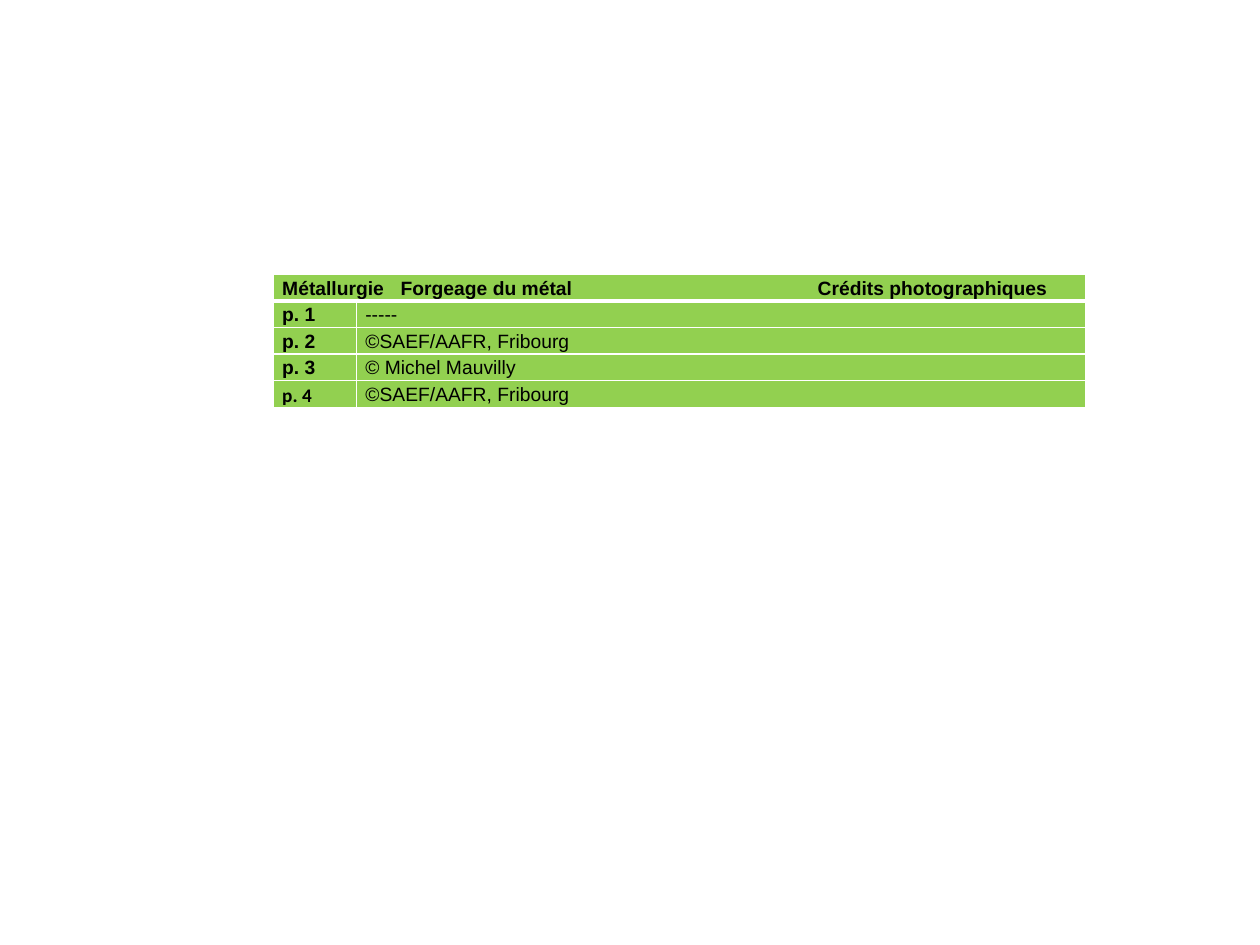
import lxml.etree
import pptx
import pptx.dml.color
import pptx.oxml.ns
import pptx.util
from pptx.util import Inches

GREEN = pptx.dml.color.RGBColor(0x92, 0xD0, 0x50)
BLACK = pptx.dml.color.RGBColor(0, 0, 0)
WHITE = pptx.dml.color.RGBColor(0xFF, 0xFF, 0xFF)

HEADING = "Métallurgie\tForgeage du métal\tCrédits photographiques"
HEADING_TABS = (Inches(0.94), Inches(4.25))
CREDITS = [
    ("p. 1", "-----"),
    ("p. 2", "©SAEF/AAFR, Fribourg"),
    ("p. 3", "© Michel Mauvilly"),
    ("p. 4", "©SAEF/AAFR, Fribourg"),
]


def add_element(parent, tag, **attributes):
    element = lxml.etree.SubElement(parent, pptx.oxml.ns.qn(tag))
    for name, value in attributes.items():
        element.set(name, str(value))
    return element


def set_borders(cell, bottom_width):
    properties = cell._tc.get_or_add_tcPr()
    for side in "LRTB":
        width = bottom_width if side == "B" else 1
        line = add_element(properties, f"a:ln{side}", w=int(pptx.util.Pt(width)))
        fill = add_element(line, "a:solidFill")
        add_element(fill, "a:srgbClr", val=WHITE)


def style_cell(cell, bottom_width=1):
    set_borders(cell, bottom_width)
    cell.fill.solid()
    cell.fill.fore_color.rgb = GREEN
    cell.margin_left = cell.margin_right = Inches(0.07)
    cell.margin_top = cell.margin_bottom = 0


def write_cell(cell, text, bold, font_name="Arial", tabs=()):
    paragraph = cell.text_frame.paragraphs[0]
    paragraph.line_spacing = 1.15
    if tabs:
        tab_list = add_element(paragraph._p.get_or_add_pPr(), "a:tabLst")
        for position in tabs:
            add_element(tab_list, "a:tab", pos=int(position), algn="l")
    run = paragraph.add_run()
    run.text = text
    run.font.name = font_name
    run.font.size = pptx.util.Pt(11)
    run.font.bold = bold
    run.font.color.rgb = BLACK


def add_credits_table(slide, left, top, width, height):
    row_count = len(CREDITS) + 1
    table = slide.shapes.add_table(row_count, 2, left, top, width, height).table
    page_width = Inches(0.66)
    table.columns[0].width = page_width
    table.columns[1].width = width - page_width
    for row_index, row in enumerate(table.rows):
        row.height = height // row_count
        for cell in row.cells:
            style_cell(cell, bottom_width=3 if row_index == 0 else 1)

    heading = table.cell(0, 0)
    heading.merge(table.cell(0, 1))
    write_cell(heading, HEADING, bold=True, tabs=HEADING_TABS)
    for row_index, (page, credit) in enumerate(CREDITS, start=1):
        page_font = "Calibri" if row_index == len(CREDITS) else "Arial"
        write_cell(table.cell(row_index, 0), page, bold=True, font_name=page_font)
        write_cell(table.cell(row_index, 1), credit, bold=False)


def main():
    presentation = pptx.Presentation()
    presentation.slide_width = Inches(10)
    presentation.slide_height = Inches(7.5)
    slide = presentation.slides.add_slide(presentation.slide_layouts[6])
    add_credits_table(slide, Inches(2.17), Inches(2.18), Inches(6.45), Inches(1.05))
    presentation.save("out.pptx")


if __name__ == "__main__":
    main()
